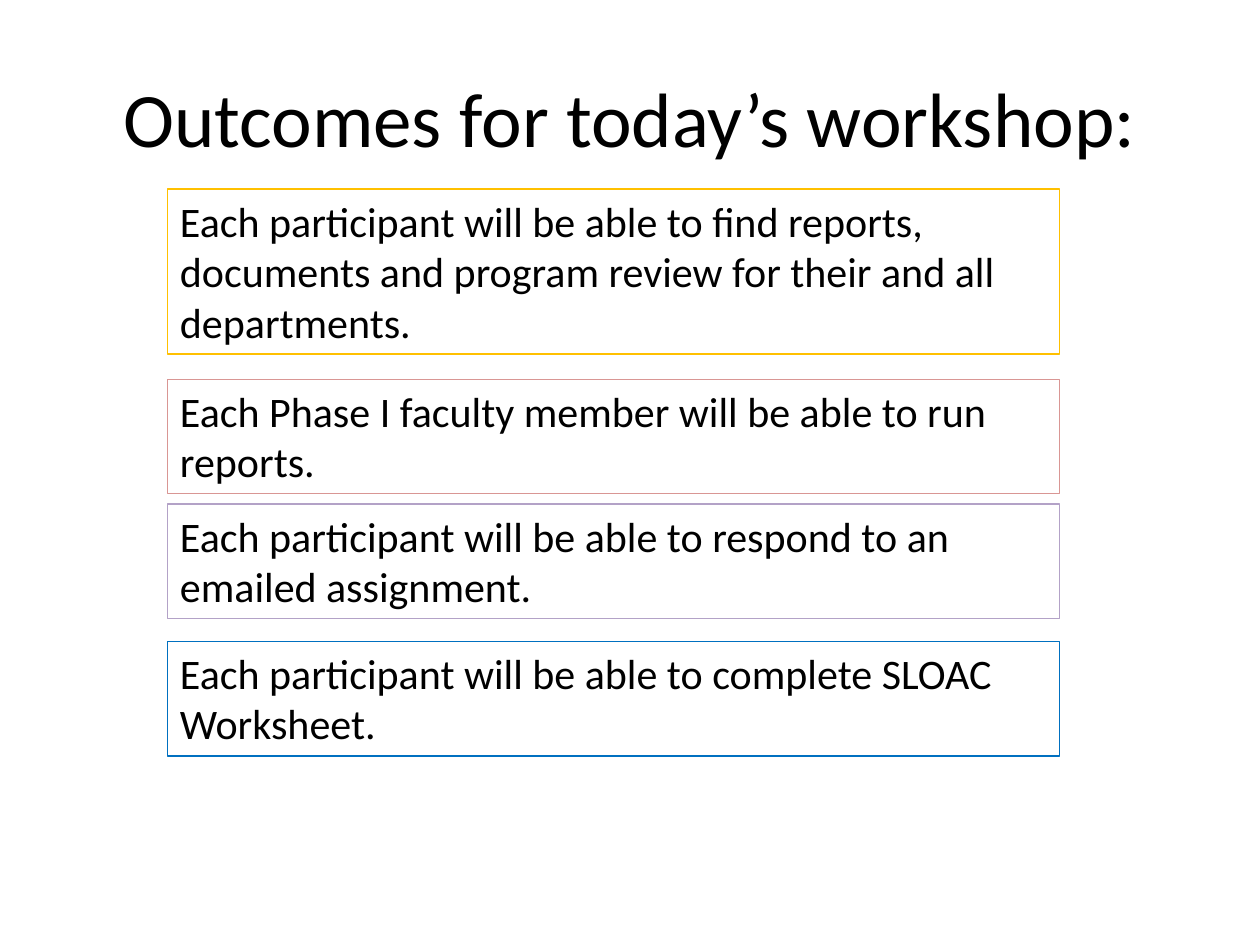
from dataclasses import dataclass

import pptx
import pptx.dml.color
import pptx.enum.shapes
import pptx.enum.text
import pptx.util

Inches = pptx.util.Inches
Align = pptx.enum.text.PP_ALIGN
Anchor = pptx.enum.text.MSO_ANCHOR

FONT = "Calibri"
BLACK = "000000"
BOX_LEFT, BOX_WIDTH = 1.33, 7.08


@dataclass
class Outcome:
    text: str
    top: float
    height: float
    outline: str


OUTCOMES = [
    Outcome("Each participant will be able to find reports, documents and "
            "program review for their and all departments.", 1.5, 1.31, "FFC000"),
    Outcome("Each Phase I faculty member will be able to run reports.",
            3.01, 0.91, "D99694"),
    Outcome("Each participant will be able to respond to an emailed assignment.",
            4, 0.91, "B3A2C7"),
    Outcome("Each participant will be able to complete SLOAC Worksheet.",
            5.09, 0.91, "0070C0"),
]


def color(hex_code: str) -> pptx.dml.color.RGBColor:
    return pptx.dml.color.RGBColor.from_string(hex_code)


def write_text(shape, text: str, size: float, alignment, anchor) -> None:
    frame = shape.text_frame
    frame.text = text
    frame.word_wrap = True
    frame.vertical_anchor = anchor
    paragraph = frame.paragraphs[0]
    paragraph.alignment = alignment
    font = paragraph.runs[0].font
    font.name = FONT
    font.size = pptx.util.Pt(size)
    font.color.rgb = color(BLACK)


def add_title(slide, text: str) -> None:
    title = slide.shapes.title
    title.left, title.top = Inches(0.5), Inches(0.3)
    title.width, title.height = Inches(9), Inches(1.25)
    write_text(title, text, 44, Align.CENTER, Anchor.MIDDLE)


def add_outcome(slide, outcome: Outcome) -> None:
    box = slide.shapes.add_shape(
        pptx.enum.shapes.MSO_SHAPE.RECTANGLE,
        Inches(BOX_LEFT), Inches(outcome.top),
        Inches(BOX_WIDTH), Inches(outcome.height))
    box.shadow.inherit = False
    box.fill.background()
    box.line.color.rgb = color(outcome.outline)
    box.line.width = pptx.util.Pt(0.75)
    write_text(box, outcome.text, 24, Align.LEFT, Anchor.TOP)
    box.text_frame.auto_size = pptx.enum.text.MSO_AUTO_SIZE.SHAPE_TO_FIT_TEXT


def main() -> None:
    presentation = pptx.Presentation()
    presentation.slide_width = Inches(10)
    presentation.slide_height = Inches(7.5)
    title_only = presentation.slide_layouts[5]
    slide = presentation.slides.add_slide(title_only)
    add_title(slide, "Outcomes for today’s workshop:")
    for outcome in OUTCOMES:
        add_outcome(slide, outcome)
    presentation.save("out.pptx")


if __name__ == "__main__":
    main()
